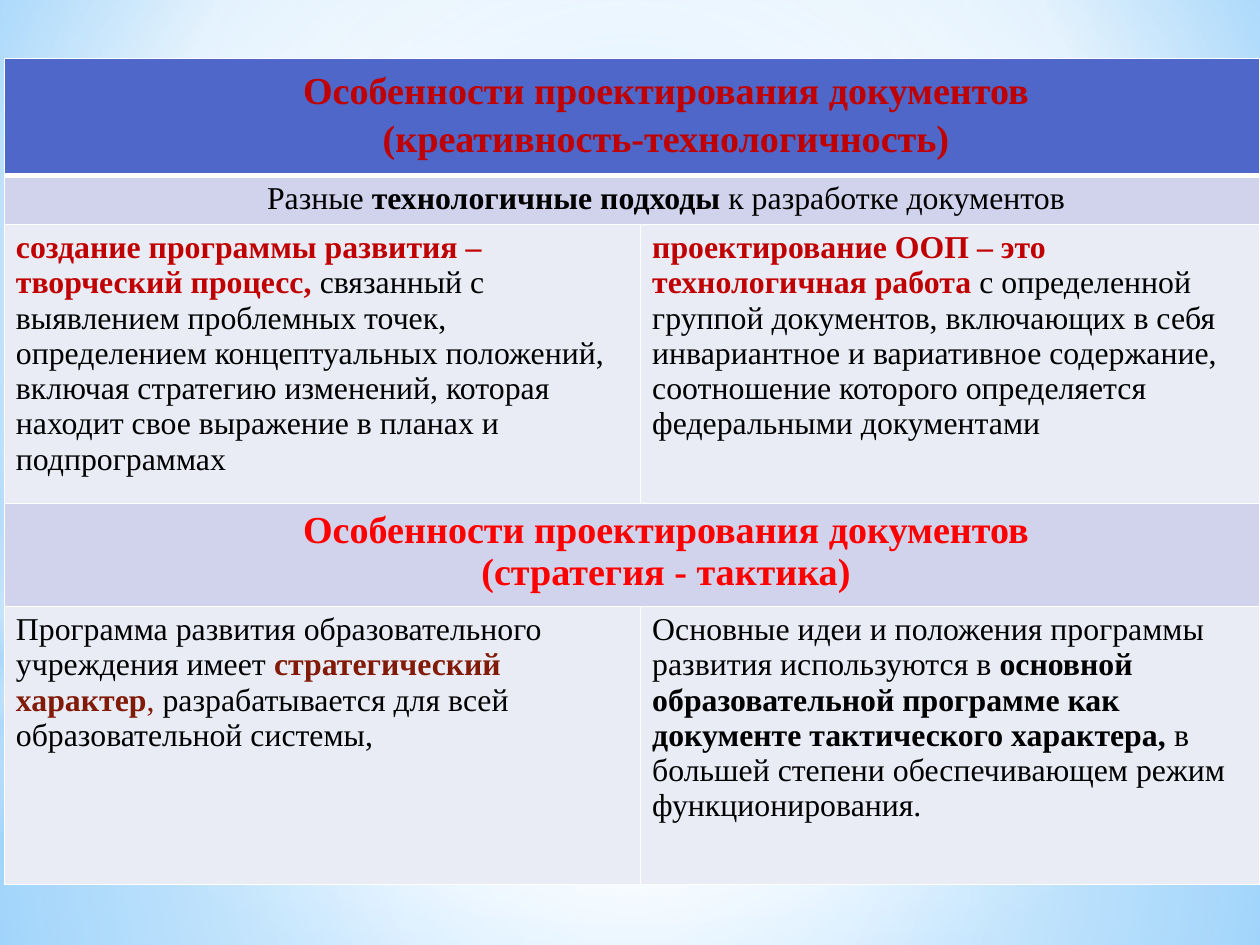
from lxml.etree import SubElement
from pptx import Presentation
from pptx.dml.color import RGBColor
from pptx.enum.shapes import MSO_SHAPE as Preset
from pptx.enum.text import PP_ALIGN as Align
from pptx.oxml.ns import qn
from pptx.util import Cm, Pt

BLACK, WHITE, RED, CRIMSON, BROWN = "000000", "FFFFFF", "FF0000", "C00000", "821A08"
BLUE, LAVENDER, PALE = "4E67C8", "D0D3EB", "E9EBF5"


def color(hex_string):
    return RGBColor.from_string(hex_string)


def set_gradient(fill, parent, stops, center=None):
    """Radial around center (left, top, right, bottom), or else top to bottom."""
    fill.solid()
    solid = parent.find(qn("a:solidFill"))
    gradient = SubElement(parent, qn("a:gradFill"), rotWithShape="1")
    parent.replace(solid, gradient)
    stop_list = SubElement(gradient, qn("a:gsLst"))
    for position, hex_string, alpha in stops:
        stop = SubElement(stop_list, qn("a:gs"), pos=str(position * 1000))
        stop_color = SubElement(stop, qn("a:srgbClr"), val=hex_string)
        if alpha < 100:
            SubElement(stop_color, qn("a:alpha"), val=str(alpha * 1000))
    if center:
        circle = SubElement(gradient, qn("a:path"), {"path": "circle"})
        sides = {side: str(share * 1000) for side, share in zip("ltrb", center)}
        SubElement(circle, qn("a:fillToRect"), sides)
    else:
        SubElement(gradient, qn("a:lin"), ang="5400000", scaled="0")


presentation = Presentation()
presentation.slide_width, presentation.slide_height = Cm(28), Cm(21)
slide = presentation.slides.add_slide(presentation.slide_layouts[6])

# Background
background_fill = slide.background.fill
background_fill.solid()
set_gradient(background_fill, slide.element.find(".//" + qn("p:bgPr")),
             [(0, "9ED5FF", 100), (60, WHITE, 100), (100, "5BB9FF", 100)],
             (20, 10, 20, 60))

# Sky layers: preset, top, height, stops, center
SKY, MIDDLE = "B4DCFA", (50, 50, 50, 50)
layers = [
    (Preset.RECTANGLE, 15.63, 5.37,
     [(0, WHITE, 91), (37, WHITE, 76), (100, SKY, 79)], MIDDLE),
    (Preset.RECTANGLE, 0, 15.63,
     [(0, WHITE, 89), (48, WHITE, 62), (100, SKY, 79)], MIDDLE),
    (Preset.RECTANGLE, 11.53, 7,
     [(0, WHITE, 0), (29, WHITE, 30), (45, SKY, 40), (55, WHITE, 26),
      (65, SKY, 60), (100, WHITE, 0)], None),
    (Preset.OVAL, 4.9, 15.63, [(0, WHITE, 100), (56, WHITE, 0)], MIDDLE),
]
for preset, top, height, stops, center in layers:
    shape = slide.shapes.add_shape(preset, 0, Cm(top), Cm(28), Cm(height))
    shape.shadow.inherit = False
    shape.line.fill.background()
    set_gradient(shape.fill, shape.element.spPr, stops, center)

# Table rows: height, fill, text size, line spacing, cells of paragraphs of runs
rows = [
    (2.6, BLUE, 24, 1.15, [[
        [("Особенности проектирования документов", CRIMSON, True)],
        [("(креативность-технологичность)", CRIMSON, True)]]]),
    (1.09, LAVENDER, 20, 1, [[
        [("Разные ", BLACK, False), ("технологичные подходы", BLACK, True),
         (" к разработке документов", BLACK, False)]]]),
    (6.2, PALE, 20, 1, [
        [[("создание программы развития – творческий процесс, ", CRIMSON, True),
          ("связанный с выявлением проблемных точек, определением концептуальных "
           "положений, включая стратегию изменений, которая находит свое выражение "
           "в планах и подпрограммах", BLACK, False)]],
        [[("проектирование ООП – это технологичная работа ", CRIMSON, True),
          ("с определенной группой документов, включающих в себя инвариантное и "
           "вариативное содержание, соотношение которого определяется "
           "федеральными документами", BLACK, False)]]]),
    (2.29, LAVENDER, 24, 1, [[
        [("Особенности проектирования документов", RED, True)],
        [("(стратегия - тактика)", RED, True)]]]),
    (6.17, PALE, 20, 1, [
        [[("Программа развития образовательного учреждения имеет ", BLACK, False),
          ("стратегический характер", BROWN, True), (", ", BROWN, False),
          ("разрабатывается для всей образовательной системы,", BLACK, False)]],
        [[("Основные идеи и положения программы развития используются в ",
           BLACK, False),
          ("основной образовательной программе как документе тактического "
           "характера, ", BLACK, True),
          ("в большей степени обеспечивающем режим функционирования.",
           BLACK, False)]]]),
]
table = slide.shapes.add_table(len(rows), 2, Cm(0.1), Cm(1.3), Cm(27.9), Cm(18.35)).table
table.columns[0].width, table.columns[1].width = Cm(14.14), Cm(13.76)

for row_index, (height, fill, size, spacing, contents) in enumerate(rows):
    table.rows[row_index].height = Cm(height)
    is_heading = len(contents) == 1
    if is_heading:
        table.cell(row_index, 0).merge(table.cell(row_index, 1))

    # Fill and white borders, thicker below the first row
    for column_index in range(2):
        cell = table.cell(row_index, column_index)
        properties = cell._tc.get_or_add_tcPr()
        for side in "LRTB":
            thick = (row_index, side) in [(0, "B"), (1, "T")]
            border = SubElement(properties, qn("a:ln" + side), w=str(Pt(3 if thick else 1)))
            SubElement(SubElement(border, qn("a:solidFill")), qn("a:srgbClr"), val=WHITE)
        cell.fill.solid()
        cell.fill.fore_color.rgb = color(fill)

    # Text
    for column_index, paragraphs in enumerate(contents):
        frame = table.cell(row_index, column_index).text_frame
        for paragraph_index, runs in enumerate(paragraphs):
            paragraph = frame.add_paragraph() if paragraph_index else frame.paragraphs[0]
            paragraph.font.name, paragraph.font.size = "Times New Roman", Pt(size)
            paragraph.line_spacing = float(spacing)
            if is_heading:
                paragraph.alignment = Align.CENTER
                paragraph._p.get_or_add_pPr().set("indent", str(Cm(1.5)))
            for text, hex_string, bold in runs:
                run = paragraph.add_run()
                run.text = text
                run.font.bold = bold
                run.font.color.rgb = color(hex_string)

presentation.save("out.pptx")
